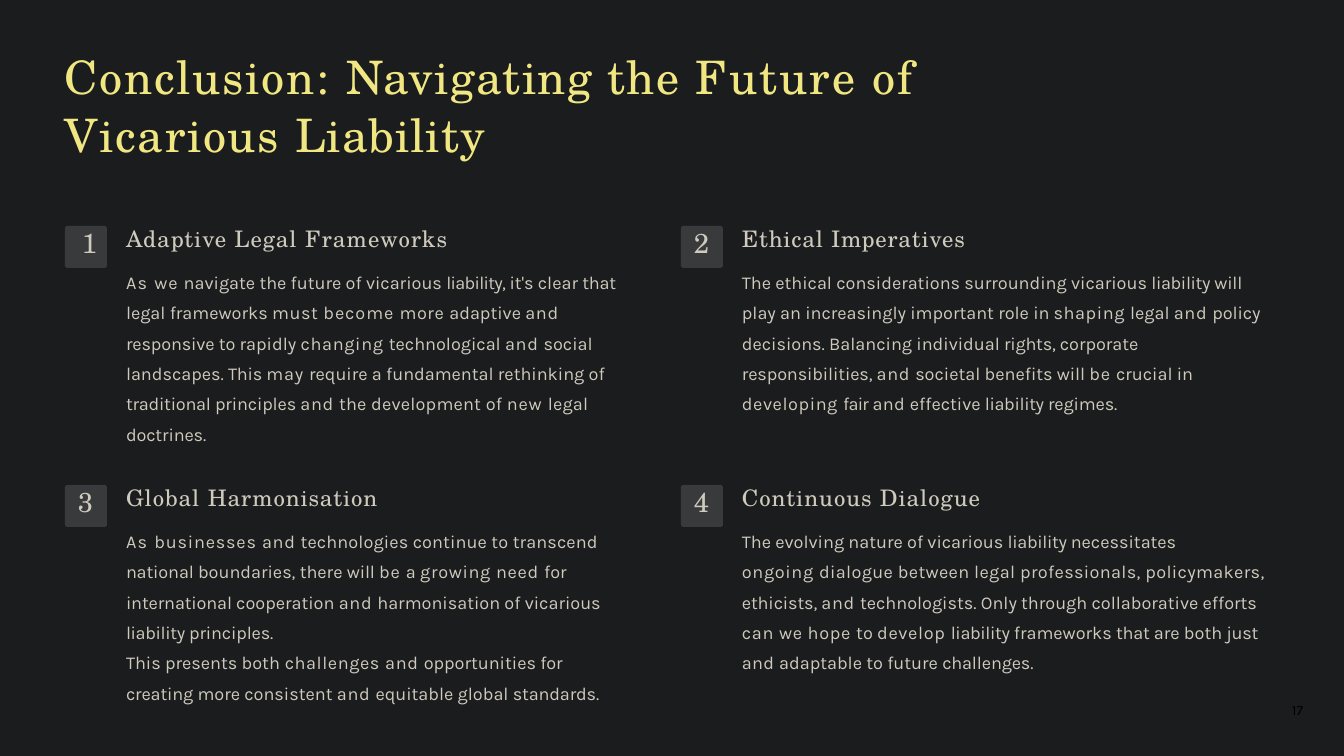
from dataclasses import dataclass

from pptx import Presentation
from pptx import util as u
from pptx.dml import color
from pptx.enum import shapes, text

PX = 914400 // 84


@dataclass(frozen=True)
class Theme:
    background: str = "1B1C1D"
    tile: str = "393A3B"
    accent: str = "F1E782"
    body: str = "CFCABE"
    footer: str = "000000"
    serif: str = "TeX Gyre Schola"
    sans: str = "Karla"
    title_size: float = 39.5
    number_size: float = 23.5
    heading_size: float = 19.5
    body_size: float = 15.5
    footer_size: float = 12


THEME = Theme()

TITLE = [("Conclusion: ", 1.5), ("Navigating ", 1.1), ("the ", 1.4), ("Future ", 1.8),
         ("of ", 1.5), ("Vicarious ", 1.4), ("Liability", 0.8)]

CARDS = [
    (("1", -1.6, 16), [("Adaptive Legal ", 0.8), ("Frameworks", 1)], [[
        ("As ", 1.2), ("we ", 0.8), ("navigate the future of vicarious ", 0),
        ("liability, ", -0.6), ("it's clear ", 0), ("that ", -0.2),
        ("legal frameworks ", 0), ("must ", 0.5), ("become ", 0.8), ("more ", 0.5),
        ("adaptive ", 0), ("and ", 0.6), ("responsive ", -0.1), ("to rapidly ", 0),
        ("changing ", 0.6), ("technological ", 0), ("and ", 0.6),
        ("social landscapes. ", 0), ("This ", -0.2), ("may ", 0.7),
        ("require a fundamental rethinking of", 0), (" traditional ", -0.2),
        ("principles ", -0.1), ("and ", 0.6), ("the development of ", 0.2),
        ("new ", 0.7), ("legal ", 0.2), ("doctrines.", -0.1)]]),
    (("2", 0.7, 12), [("Ethical Imperatives", 0.7)], [[
        ("The ethical considerations surrounding vicarious ", 0), ("liability ", -0.3),
        ("will ", -0.2), ("play an increasingly important role ", 0), ("in ", -0.1),
        ("shaping ", 0.5), ("legal ", 0), ("and ", 0.6), ("policy ", -0.1),
        ("decisions. Balancing individual ", 0), ("rights, ", -0.2), ("corporate ", 0),
        ("responsibilities, ", -0.1), ("and ", 0.6), ("societal benefits ", 0),
        ("will ", -0.1), ("be ", 0.7), ("crucial ", 0), ("in ", -0.1),
        ("developing ", 0.5), ("fair ", -0.6), ("and ", 0.3), ("effective ", 0),
        ("liability ", -0.3), ("regimes.", -0.1)]]),
    (("3", 1.1, 12), [("Global ", 0.8), ("Harmonisation", 0.7)], [[
        ("As ", 1.2), ("businesses ", 0.7), ("and ", 0.6),
        ("technologies continue to transcend ", 0.1), ("national ", -0.1),
        ("boundaries, there ", 0), ("will ", -0.1), ("be ", 0.7), ("a ", 0),
        ("growing need ", 0.6), ("for ", 0), ("international ", -0.1),
        ("cooperation ", 0), ("and ", 0.6), ("harmonisation of vicarious ", 0),
        ("liability ", -0.3), ("principles.", -0.1)], [
        ("This presents both", 0), (" challenges", 0.5), (" and ", 0.6),
        ("opportunities ", 0), ("for creating ", -0.1), ("more consistent ", 0),
        ("and ", 0.6), ("equitable global ", 0), ("standards.", -0.1)]]),
    (("4", -0.5, 12), [("Continuous Dialogue", 0.8)], [[
        ("The evolving nature of vicarious ", 0), ("liability ", -0.3),
        ("necessitates\n", 0), ("ongoing ", 0.6),
        ("dialogue between legal professionals, policymakers, ", 0.3),
        ("ethicists, ", -0.1), ("and ", 0.6),
        ("technologists. Only through collaborative efforts ", 0),
        ("can we hope ", 0.6), ("to ", 0), ("develop ", 0.6), ("liability ", -0.3),
        ("frameworks ", 0), ("that ", -0.2), ("are both", 0), (" just ", -0.2),
        ("and ", 0.3), ("adaptable to future ", 0), ("challenges.", -0.1)]]),
]


def rgb(value):
    return color.RGBColor.from_string(value)


def place(box, left, top, width, height):
    box.left, box.top = left * PX, top * PX
    box.width, box.height = width * PX, height * PX


def prepare_frame(box):
    frame = box.text_frame
    frame.word_wrap = True
    frame.auto_size = text.MSO_AUTO_SIZE.NONE
    frame.vertical_anchor = text.MSO_ANCHOR.TOP
    frame.margin_left = frame.margin_top = PX
    frame.margin_right = frame.margin_bottom = 0
    return frame


def add_text_box(page, left, top, width, height):
    box = page.shapes.add_textbox(0, 0, 0, 0)
    place(box, left, top, width, height)
    return prepare_frame(box)


def write(para, spans, font, size, fill, before=0, leading=1.0):
    para.alignment = text.PP_ALIGN.LEFT
    para.space_before = u.Pt(before)
    para.line_spacing = leading
    for words, tracking in spans:
        span = para.add_run()
        span.text = words.rstrip("\n")
        span.font.name = font
        span.font.size = u.Pt(size)
        span.font.color.rgb = rgb(fill)
        span.font._element.set("spc", str(round(tracking * 100)))
        if words.endswith("\n"):
            para.add_line_break()


def add_title(page):
    title = page.shapes.title
    place(title, 64, 45, 1030, 118)
    write(prepare_frame(title).paragraphs[0], TITLE, THEME.serif,
          THEME.title_size, THEME.accent, 0.9, 1.05)


def add_number_tile(page, left, top, digit, tracking, inset):
    tile = page.shapes.add_shape(shapes.MSO_SHAPE.ROUNDED_RECTANGLE, 0, 0, 0, 0)
    place(tile, left, top, 42, 42)
    tile.adjustments[0] = 0.06
    tile.shadow.inherit = False
    tile.fill.solid()
    tile.fill.fore_color.rgb = rgb(THEME.tile)
    tile.line.fill.background()
    frame = add_text_box(page, left + inset, top - 1, 20, 35)
    write(frame.paragraphs[0], [(digit, tracking)], THEME.serif,
          THEME.number_size, THEME.body, 1)


def add_card(page, left, top, width, number, heading, body):
    add_number_tile(page, left, top, *number)
    frame = add_text_box(page, left + 60, top - 2, width, 192)
    write(frame.paragraphs[0], heading, THEME.serif, THEME.heading_size, THEME.body, 1.1)
    for index, spans in enumerate(body):
        write(frame.add_paragraph(), spans, THEME.sans, THEME.body_size, THEME.body,
              0.1 if index else 8.8, 1.4)


def add_page_number(page):
    frame = add_text_box(page, 1291, 701, 30, 22)
    write(frame.paragraphs[0], [("17", 0)], THEME.sans, THEME.footer_size, THEME.footer)


def main():
    deck = Presentation()
    deck.slide_width, deck.slide_height = u.Inches(16), u.Inches(9)
    page = deck.slides.add_slide(deck.slide_layouts[5])
    page.background.fill.solid()
    page.background.fill.fore_color.rgb = rgb(THEME.background)
    add_title(page)
    columns = [(65, 503), (681, 526)]
    for index, card in enumerate(CARDS):
        row, column = divmod(index, 2)
        left, width = columns[column]
        add_card(page, left, 226 + row * 259, width, *card)
    add_page_number(page)
    deck.save("out.pptx")


if __name__ == "__main__":
    main()
